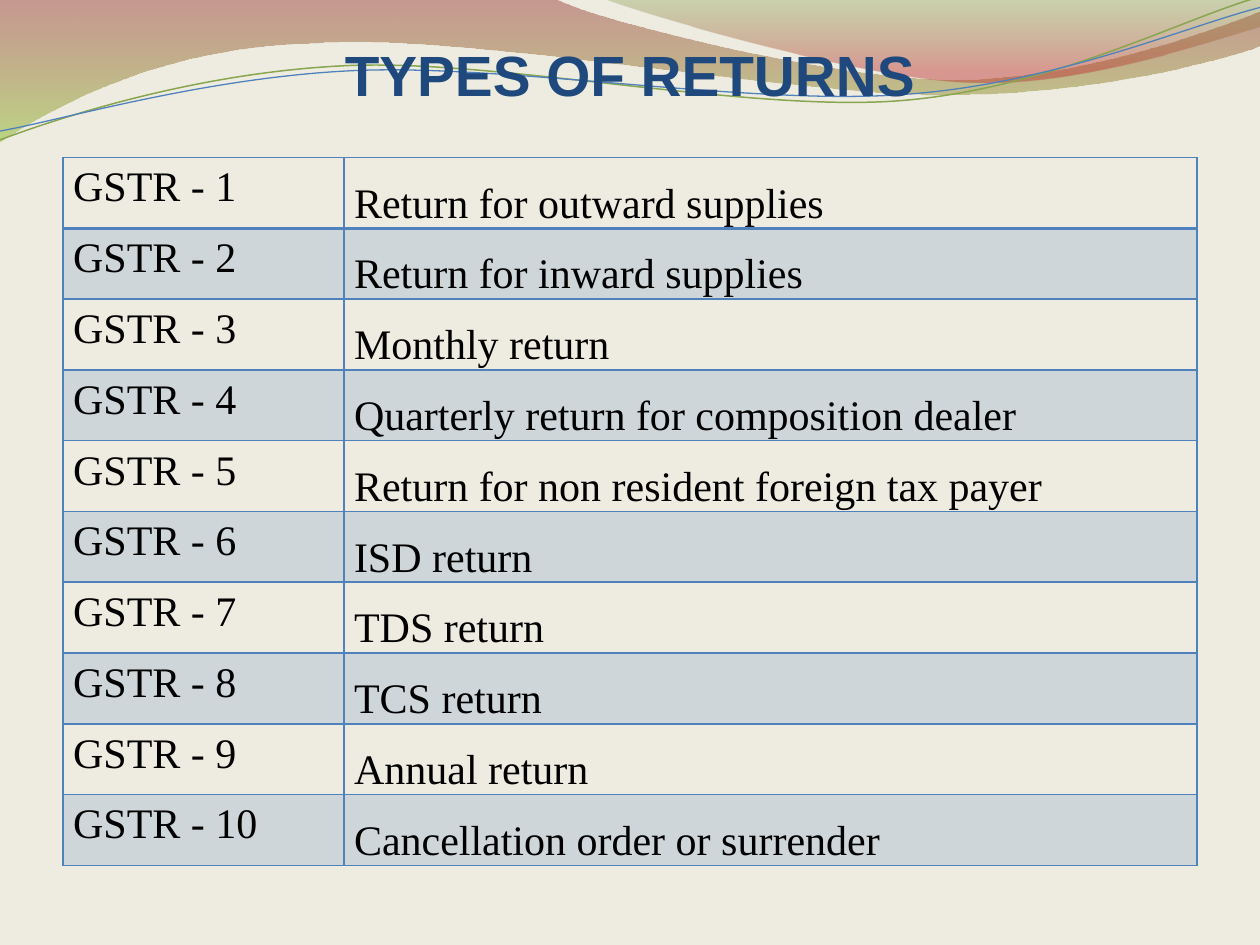
import math

from lxml import etree
from pptx import Presentation, util as u
from pptx.dml.color import RGBColor
from pptx.enum import text
from pptx.oxml import ns

hex_color = RGBColor.from_string
BLUE = "4F81BD"

deck = Presentation()
deck.slide_width, deck.slide_height = u.Inches(10), u.Inches(7.5)
page = deck.slides.add_slide(deck.slide_layouts[5])
page.background.fill.solid()
page.background.fill.fore_color.rgb = hex_color("EEECE1")

# Grid of 10 columns by 7.5 rows; every length below counts its units
unit = deck.slide_width / 10


def write(frame, words, font, size, color, bold=False, align=None, spacing=None):
    para = frame.paragraphs[0]
    para.alignment, para.line_spacing = align, spacing
    span = para.add_run()
    span.text = words
    span.font.name, span.font.size, span.font.bold = font, u.Pt(size), bold
    span.font.color.rgb = hex_color(color)


def draw_curve(pieces, close):
    """After the start, two numbers make a straight piece, six a Bezier piece."""
    points = [(piece[i] * unit, piece[i + 1] * unit)
              for piece in pieces for i in range(0, len(piece), 2)]
    builder = page.shapes.build_freeform(*points[0])
    builder.add_line_segments(points[1:], close=close)
    shape = builder.convert_to_shape()
    shape.shadow.inherit = False
    # Join the three straight steps of each Bezier piece into one curve
    steps = iter(list(shape.element.iter(ns.qn("a:lnTo"))))
    for piece in pieces[1:]:
        group = [next(steps) for _ in range(len(piece) // 2)]
        if len(group) == 3:
            curve = etree.Element(ns.qn("a:cubicBezTo"))
            group[0].addprevious(curve)
            for step in group:
                curve.append(step[0])
                step.getparent().remove(step)
    return shape


# Gradient waves: pieces, stops of (position, colour, opacity %)
waves = [
    ([(0, 0), (4.4, -0.01), (4.76, 0.17, 6.64, 0.63, 7.58, 0.63),
      (8.53, 0.63, 9.58, 0.26, 10, 0.09), (10.01, 0.36),
      (9.83, 0.44, 8.7, 0.76, 7.46, 0.75),
      (6.22, 0.75, 3.82, 0.28, 2.57, 0.34),
      (1.29, 0.36, 0.46, 0.83, -0.01, 1.13), (0, 0)],
     [(0, "973330", 45), (1, "95C238", 55)]),
    ([(4.79, -0.01), (5.09, 0.11, 6.82, 0.62, 7.69, 0.65),
      (8.56, 0.69, 9.61, 0.32, 10, 0.21), (10, 0), (4.79, -0.01)],
     [(0, "769537", 30), (0.8, "BE3330", 45)]),
]
for pieces, stops in waves:
    wave = draw_curve(pieces, True)
    wave.line.fill.background()
    wave.fill.gradient()
    wave.fill.gradient_angle = 270
    for stop, (position, color, _) in zip(wave.fill.gradient_stops, stops):
        stop.position = position
        stop.color.rgb = hex_color(color)
    for tint, (_, _, opacity) in zip(wave.element.spPr.iter(ns.qn("a:srgbClr")), stops):
        etree.SubElement(tint, ns.qn("a:alpha"), val=str(opacity * 1000))

# Thin wave lines, laid level around their centre and then tilted
tilt = 2.7
cos, sin = math.cos(math.radians(tilt)), math.sin(math.radians(tilt))
strands = [
    ([(0, 1.11), (0.48, 0.93, 1.58, 0.57, 2.77, 0.52), (3.95, 0.47, 5.93, 0.89, 7.13, 0.8),
      (8.33, 0.71, 9.38, 0.15, 9.98, -0.02)], (4.99, 0.58), "89A54F", 0.85),
    ([(0, 1.04), (0.47, 0.96, 1.64, 0.61, 2.83, 0.56), (4.03, 0.51, 5.97, 0.84, 7.17, 0.75),
      (8.36, 0.67, 9.41, 0.21, 10, 0.06)], (5, 0.59), BLUE, 0.75),
]
for pieces, (middle_x, middle_y), color, weight in strands:
    level = []
    for piece in pieces:
        offsets = [(x - middle_x, y - middle_y) for x, y in zip(piece[::2], piece[1::2])]
        level.append([n for x, y in offsets
                      for n in (middle_x + x * cos - y * sin, middle_y + x * sin + y * cos)])
    strand = draw_curve(level, False)
    strand.rotation = -tilt
    strand.fill.background()
    strand.line.color.rgb = hex_color(color)
    strand.line.width = u.Pt(weight)

# Title, brought in front of the waves
title = page.shapes.title
page.shapes.element.append(title.element)
title.left, title.top, title.width, title.height = (
    int(n * unit) for n in (0.5, 0.23, 9, 0.63))
frame = title.text_frame
frame.auto_size = text.MSO_AUTO_SIZE.NONE
frame.word_wrap = True
frame.vertical_anchor = text.MSO_ANCHOR.BOTTOM
frame.margin_left = frame.margin_right = frame.margin_bottom = 0
frame.margin_top = int(0.05 * unit)
write(frame, "TYPES OF RETURNS", "Arial", 32.4, "1F497D", bold=True,
      align=text.PP_ALIGN.CENTER)

# Table of returns
returns = [
    "Return for outward supplies", "Return for inward supplies", "Monthly return",
    "Quarterly return for composition dealer",
    "Return for non resident foreign tax payer", "ISD return", "TDS return",
    "TCS return", "Annual return", "Cancellation order or surrender",
]
table = page.shapes.add_table(
    len(returns), 2, *(int(n * unit) for n in (0.5, 1.25, 9, 5.62))).table
table.first_row = table.horz_banding = False
for column, width in zip(table.columns, (2.23, 6.77)):
    column.width = int(width * unit)

for row, meaning in enumerate(returns):
    for column, (words, spacing) in enumerate([(f"GSTR - {row + 1}", 1.15), (meaning, 1.5)]):
        cell = table.cell(row, column)
        cell.margin_left = cell.margin_right = int(0.08 * unit)
        cell.margin_top = cell.margin_bottom = 0
        write(cell.text_frame, words, "Times New Roman", 24, "000000", spacing=spacing)
        properties = cell._tc.get_or_add_tcPr()
        if row % 2:
            cell.fill.solid()
            cell.fill.fore_color.rgb = hex_color(BLUE)
            tint = properties.find(".//" + ns.qn("a:srgbClr"))
            etree.SubElement(tint, ns.qn("a:alpha"), val="20000")
        else:
            cell.fill.background()
        # Borders, heavier under the first row
        for place, side in enumerate("LRTB"):
            heavy = (row, side) in ((0, "B"), (1, "T"))
            border = etree.Element(ns.qn(f"a:ln{side}"), w=str(u.Pt(2 if heavy else 1)))
            paint = etree.SubElement(border, ns.qn("a:solidFill"))
            etree.SubElement(paint, ns.qn("a:srgbClr"), val=BLUE)
            properties.insert(place, border)

deck.save("out.pptx")
